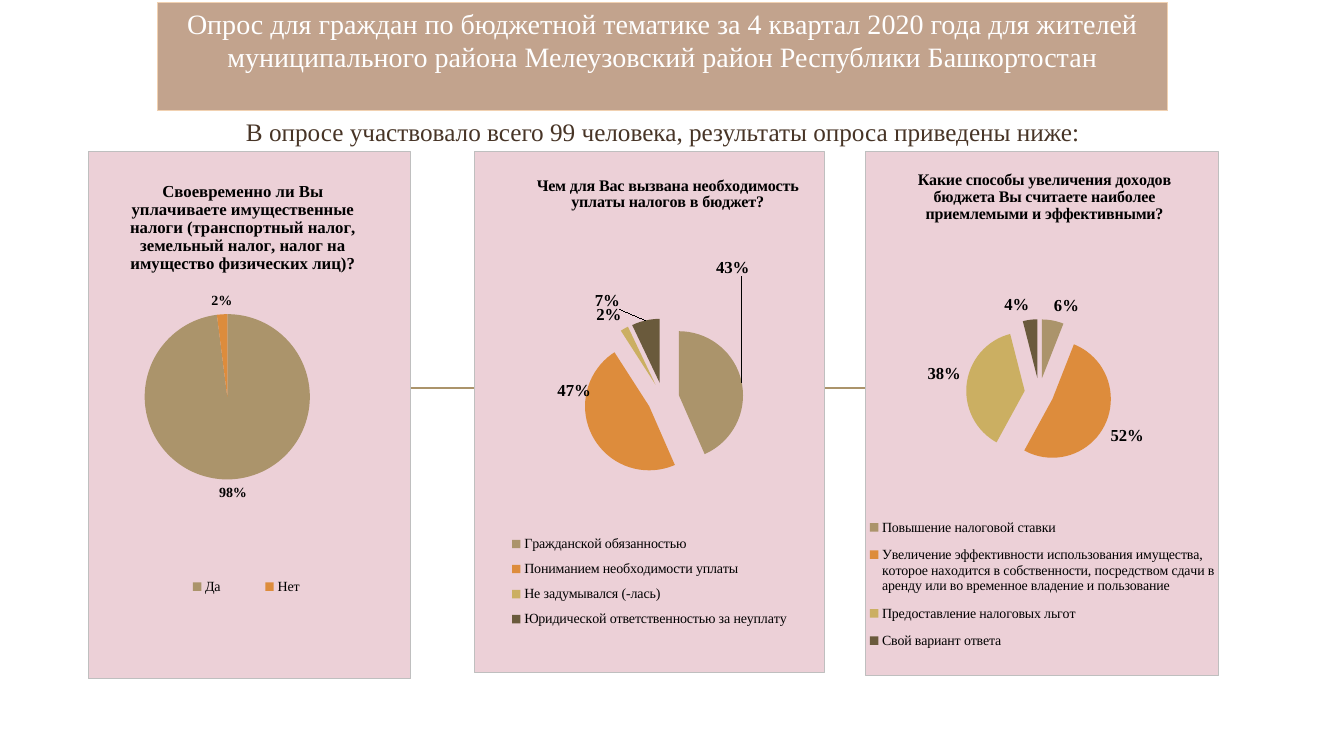
from lxml import etree
from pptx import Presentation
from pptx.chart.data import CategoryChartData
from pptx.dml.color import RGBColor
from pptx.enum.chart import XL_CHART_TYPE as ChartType
from pptx.enum.chart import XL_LABEL_POSITION as LabelPosition
from pptx.enum.chart import XL_LEGEND_POSITION as LegendPosition
from pptx.enum.shapes import MSO_CONNECTOR as Connector
from pptx.enum.shapes import MSO_SHAPE as Shape
from pptx.enum.text import MSO_ANCHOR as Anchor
from pptx.enum.text import PP_ALIGN as Align
from pptx.oxml import parse_xml
from pptx.oxml.ns import nsdecls, qn
from pptx.util import Pt

PX = 9144
FONT = "Times New Roman"
WHITE = RGBColor(0xFF, 0xFF, 0xFF)
BLACK = RGBColor(0, 0, 0)
BROWN = RGBColor(0x47, 0x34, 0x26)
BANNER = RGBColor(0xC2, 0xA3, 0x8D)
BANNER_EDGE = RGBColor(0xF1, 0xD1, 0xB1)
PANEL = RGBColor(0xEC, 0xD0, 0xD7)
PANEL_EDGE = RGBColor(0xBF, 0xBF, 0xBF)
SAND = RGBColor(0xAB, 0x94, 0x6B)
ORANGE = RGBColor(0xDD, 0x8C, 0x3C)
GOLD = RGBColor(0xCB, 0xAF, 0x62)
OLIVE = RGBColor(0x6A, 0x5A, 0x3C)
SLICES = [SAND, ORANGE, GOLD, OLIVE]

SURVEYS = [
    dict(
        box=(87, 150, 321, 524),
        title="Своевременно ли Вы уплачиваете имущественные налоги "
              "(транспортный налог, земельный налог, налог на имущество физических лиц)?",
        title_size=12, label_size=10, explosion=0,
        answers=[("Да", 98), ("Нет", 2)],
        title_at=(0.12, 0.05), plot_at=(0.175, 0.141, 0.512, 0.648),
        legend_at=(0.2, 0.79, 0.58, 0.07), label_shifts={},
    ),
    dict(
        box=(470, 150, 348, 518),
        title="Чем для Вас вызвана необходимость уплаты налогов в бюджет?",
        title_size=11.5, label_size=12, explosion=25,
        answers=[("Гражданской обязанностью", 43),
                 ("Пониманием необходимости уплаты", 47),
                 ("Не задумывался (-лась)", 2),
                 ("Юридической ответственностью за неуплату", 7)],
        title_at=(0.17, 0.04), plot_at=(0.311, 0.32, 0.458, 0.308),
        legend_at=(0.09, 0.72, 0.82, 0.21),
        label_shifts={0: (-0.09, -0.2), 1: (0.01, -0.11), 3: (-0.07, -0.01)},
    ),
    dict(
        box=(858, 150, 353, 521),
        title="Какие способы увеличения доходов бюджета Вы считаете "
              "наиболее приемлемыми и эффективными?",
        title_size=11.5, label_size=12, explosion=25,
        answers=[("Повышение налоговой ставки", 6),
                 ("Увеличение эффективности использования имущества, которое "
                  "находится в собственности, посредством сдачи в аренду или "
                  "во временное владение и пользование", 52),
                 ("Предоставление налоговых льгот", 38),
                 ("Свой вариант ответа", 4)],
        title_at=(0.14, 0.03), plot_at=(0.285, 0.305, 0.414, 0.31),
        legend_at=(0, 0.68, 1, 0.29), label_shifts={},
    ),
]


def scaled(box):
    return [length * PX for length in box]


def style_font(font, size, color, bold=False):
    font.name = FONT
    font.size = Pt(size)
    font.bold = bold
    font.color.rgb = color


def write_line(frame, text, size, color):
    frame.word_wrap = True
    para = frame.paragraphs[0]
    para.text = text
    para.alignment = Align.CENTER
    style_font(para.font, size, color)


def add_axis_line(page, left, right, y):
    line = page.shapes.add_connector(Connector.STRAIGHT, *scaled((left, y, right, y)))
    line.line.color.rgb = SAND
    line.line.width = Pt(1.25)
    etree.SubElement(line._element.spPr, qn("a:effectLst"))


def add_banner(page, box):
    banner = page.shapes.add_shape(Shape.RECTANGLE, *scaled(box))
    banner.shadow.inherit = False
    banner.fill.solid()
    banner.fill.fore_color.rgb = BANNER
    banner.line.color.rgb = BANNER_EDGE
    banner.line.width = Pt(0.75)
    frame = banner.text_frame
    frame.vertical_anchor = Anchor.BOTTOM
    frame.margin_bottom = 37 * PX
    write_line(frame, "Опрос для граждан по бюджетной тематике за 4 квартал 2020 года "
               "для жителей муниципального района Мелеузовский район "
               "Республики Башкортостан", 20, WHITE)


def add_subtitle(page, box):
    subtitle = page.shapes.add_textbox(*scaled(box))
    write_line(subtitle.text_frame, "В опросе участвовало всего 99 человека, "
               "результаты опроса приведены ниже:", 18, BROWN)


def make_layout(values, modes=("xMode", "yMode"), inner=False):
    layout = parse_xml(f"<c:layout {nsdecls('c')}><c:manualLayout/></c:layout>")
    settings = [("layoutTarget", "inner")] if inner else []
    settings += [(mode, "edge") for mode in modes]
    settings += zip("xywh", values)
    for name, value in settings:
        etree.SubElement(layout[0], qn(f"c:{name}")).set("val", str(value))
    return layout


def set_layout(parent, layout, after=None):
    for old in parent.findall(qn("c:layout")):
        parent.remove(old)
    if after is None:
        parent.insert(0, layout)
    else:
        parent.find(qn(after)).addnext(layout)


def fill_panel(chart):
    chart.element.find(qn("c:chart")).addnext(parse_xml(
        f"<c:spPr {nsdecls('c', 'a')}>"
        f'<a:solidFill><a:srgbClr val="{PANEL}"/></a:solidFill>'
        f'<a:ln w="{Pt(0.75)}"><a:solidFill><a:srgbClr val="{PANEL_EDGE}"/>'
        "</a:solidFill></a:ln></c:spPr>"))


def style_slices(series, survey):
    if survey["explosion"]:
        explosion = parse_xml(f'<c:explosion {nsdecls("c")} val="{survey["explosion"]}"/>')
        series._element.find(qn("c:cat")).addprevious(explosion)
    for index, color in enumerate(SLICES[:len(survey["answers"])]):
        fill = series.points[index].format.fill
        fill.solid()
        fill.fore_color.rgb = color


def style_labels(series, survey):
    labels = series.data_labels
    labels.show_percentage = True
    labels.show_value = False
    labels.number_format = "0%"
    labels.number_format_is_linked = False
    labels.position = LabelPosition.OUTSIDE_END
    style_font(labels.font, survey["label_size"], BLACK, True)
    for index, shift in survey["label_shifts"].items():
        label = series.points[index].data_label
        style_font(label.font, survey["label_size"], BLACK, True)
        label.position = LabelPosition.OUTSIDE_END
        element = series._element.xpath(f"c:dLbls/c:dLbl[c:idx/@val={index}]")[0]
        element.find(qn("c:showVal")).set("val", "0")
        element.find(qn("c:showPercent")).set("val", "1")
        set_layout(element, make_layout(shift, modes=()), "c:idx")


def add_survey(page, survey):
    data = CategoryChartData()
    data.categories = [answer for answer, _ in survey["answers"]]
    data.add_series("Ответы", [share for _, share in survey["answers"]])
    chart = page.shapes.add_chart(ChartType.PIE, *scaled(survey["box"]), data).chart
    style_font(chart.font, 10, BLACK)
    fill_panel(chart)
    chart.has_title = True
    title = chart.chart_title.text_frame.paragraphs[0]
    title.text = survey["title"]
    style_font(title.font, survey["title_size"], BLACK, True)
    chart.has_legend = True
    chart.legend.position = LegendPosition.BOTTOM
    chart.legend.include_in_layout = False
    style_font(chart.legend.font, 10, BLACK)
    plot = chart.plots[0]
    plot.vary_by_categories = True
    style_slices(plot.series[0], survey)
    style_labels(plot.series[0], survey)
    root = chart.element.find(qn("c:chart"))
    set_layout(root.find(qn("c:title")), make_layout(survey["title_at"]), "c:tx")
    set_layout(root.find(qn("c:legend")), make_layout(survey["legend_at"]), "c:legendPos")
    set_layout(root.find(qn("c:plotArea")), make_layout(survey["plot_at"], inner=True))


def main():
    deck = Presentation()
    deck.slide_width, deck.slide_height = scaled((1333, 750))
    page = deck.slides.add_slide(deck.slide_layouts[6])
    add_axis_line(page, 294, 1040, 385)
    add_banner(page, (156, 3, 1002, 107))
    add_subtitle(page, (185, 110, 945, 40))
    for survey in SURVEYS:
        add_survey(page, survey)
    deck.save("out.pptx")


if __name__ == "__main__":
    main()
